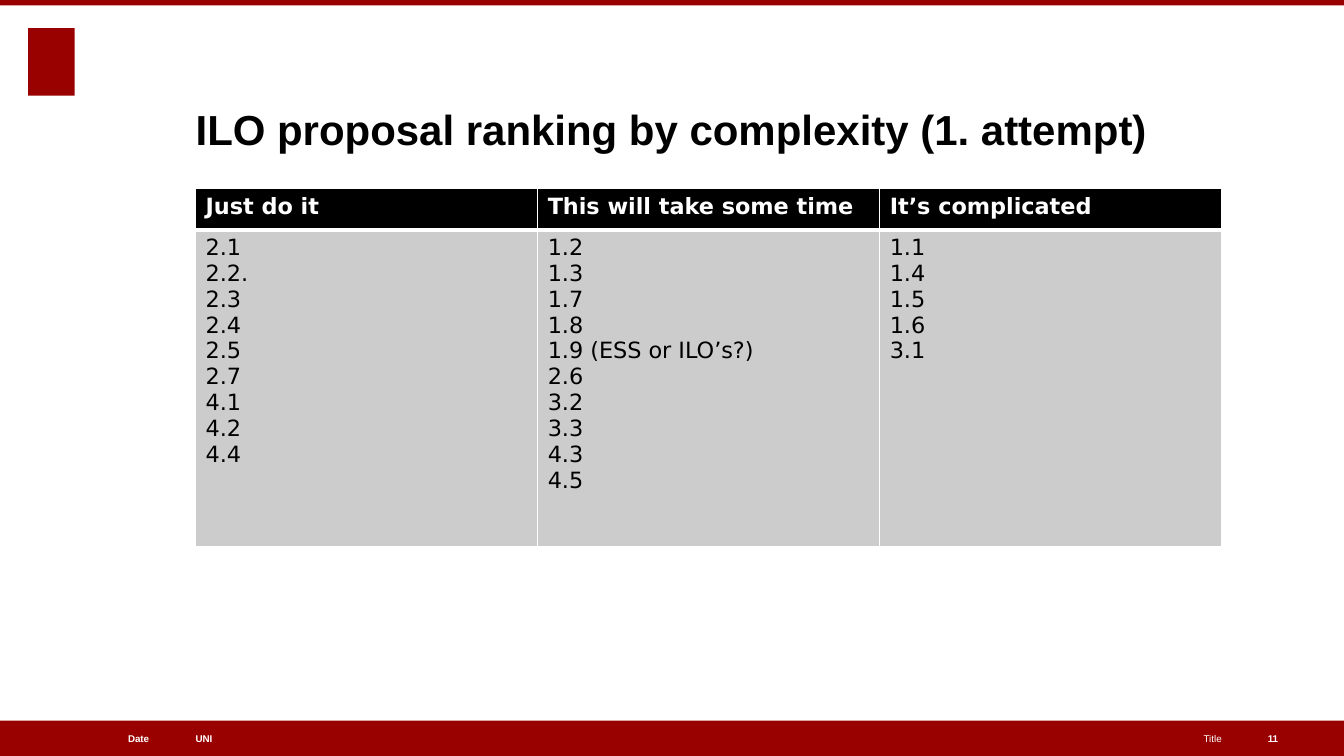
from lxml import etree
from pptx import Presentation
from pptx import util as u
from pptx.dml import color
from pptx.enum import shapes, text
from pptx.oxml import ns

COLORS = {"red": "990000", "black": "000000", "white": "FFFFFF", "grey": "CCCCCC"}
SLIDE_W, SLIDE_H = 33.87, 19.05
LEFT, WIDTH = 4.93, 25.86
FOOTER_TOP, FOOTER_H = 18.16, 0.89

TITLE = "ILO proposal ranking by complexity (1. attempt)"
RANKING = {
    "Just do it": ["2.1", "2.2.", "2.3", "2.4", "2.5", "2.7", "4.1", "4.2", "4.4"],
    "This will take some time": ["1.2", "1.3", "1.7", "1.8", "1.9 (ESS or ILO’s?)",
                                 "2.6", "3.2", "3.3", "4.3", "4.5"],
    "It’s complicated": ["1.1", "1.4", "1.5", "1.6", "3.1"],
}
FOOTERS = [
    # text, left, width, alignment, bold
    ("UNI", LEFT, 9.45, text.PP_ALIGN.LEFT, True),
    ("Date", 0.69, 3.07, text.PP_ALIGN.RIGHT, True),
    ("Title", 15.52, 15.27, text.PP_ALIGN.RIGHT, False),
    ("11", 31.95, 1.19, text.PP_ALIGN.LEFT, True),
]


def rgb(name):
    return color.RGBColor.from_string(COLORS[name])


def set_attrs(obj, values):
    for name, value in values.items():
        setattr(obj, name, value)


def write(tf, lines, font_color, align=text.PP_ALIGN.LEFT, **font):
    """Fill a text frame with one paragraph per line."""
    for i, line in enumerate(lines):
        p = tf.add_paragraph() if i else tf.paragraphs[0]
        p.alignment = align
        r = p.add_run()
        r.text = line
        set_attrs(r.font, font)
        r.font.color.rgb = rgb(font_color)


def set_frame(tf, anchor):
    """Wrap the text, without insets or autofit."""
    set_attrs(tf, {"word_wrap": True, "auto_size": text.MSO_AUTO_SIZE.NONE,
                   "vertical_anchor": anchor, "margin_left": 0, "margin_top": 0,
                   "margin_right": 0, "margin_bottom": 0})


def add_block(s, left, top, width, height):
    sp = s.shapes.add_shape(shapes.MSO_SHAPE.RECTANGLE, u.Cm(left), u.Cm(top),
                            u.Cm(width), u.Cm(height))
    sp.shadow.inherit = False
    sp.fill.solid()
    sp.fill.fore_color.rgb = rgb("red")
    sp.line.fill.background()


def add_footer(s, label, left, width, align, bold):
    sp = s.shapes.add_textbox(u.Cm(left), u.Cm(FOOTER_TOP), u.Cm(width), u.Cm(FOOTER_H))
    set_frame(sp.text_frame, text.MSO_ANCHOR.MIDDLE)
    write(sp.text_frame, [label], "white", align, name="Arial", size=u.Pt(7), bold=bold)


def set_title(s):
    sp = s.shapes.title
    set_attrs(sp, {"left": u.Cm(LEFT), "top": u.Cm(1.19),
                   "width": u.Cm(WIDTH), "height": u.Cm(2.69)})
    set_frame(sp.text_frame, text.MSO_ANCHOR.BOTTOM)
    write(sp.text_frame, [TITLE], "black", name="Arial", size=u.Pt(30), bold=True)


def set_borders(cell, **widths):
    """Draw white borders, with widths in points for sides L, R, T and B."""
    tcPr = cell._tc.get_or_add_tcPr()
    for side, width in widths.items():
        ln = etree.SubElement(tcPr, ns.qn(f"a:ln{side}"), w=str(u.Pt(width)))
        fill = etree.SubElement(ln, ns.qn("a:solidFill"))
        etree.SubElement(fill, ns.qn("a:srgbClr"), val=COLORS["white"])


def fill_cell(cell, lines, fill, font_color, bold):
    cell.fill.solid()
    cell.fill.fore_color.rgb = rgb(fill)
    write(cell.text_frame, lines, font_color, name="DejaVu Sans", size=u.Pt(16), bold=bold)


def add_ranking(s):
    heights = [1.04, 7.99]
    table = s.shapes.add_table(2, len(RANKING), u.Cm(LEFT), u.Cm(4.75),
                               u.Cm(WIDTH), u.Cm(sum(heights))).table
    for row, height in zip(table.rows, heights):
        row.height = u.Cm(height)
    for col, (heading, proposals) in enumerate(RANKING.items()):
        head, body = table.cell(0, col), table.cell(1, col)
        set_borders(head, L=1, R=1, T=1, B=3)
        set_borders(body, L=1, R=1, T=3, B=1)
        fill_cell(head, [heading], "black", "white", True)
        fill_cell(body, proposals, "grey", "black", False)


def main():
    prs = Presentation()
    set_attrs(prs, {"slide_width": u.Cm(SLIDE_W), "slide_height": u.Cm(SLIDE_H)})
    s = prs.slides.add_slide(prs.slide_layouts[5])
    add_block(s, 0.71, 0.71, 1.17, 1.7)
    add_block(s, 0, FOOTER_TOP, SLIDE_W, FOOTER_H)
    add_block(s, 0, 0, SLIDE_W, 0.14)
    for footer in FOOTERS:
        add_footer(s, *footer)
    set_title(s)
    add_ranking(s)
    prs.save("out.pptx")


if __name__ == "__main__":
    main()
